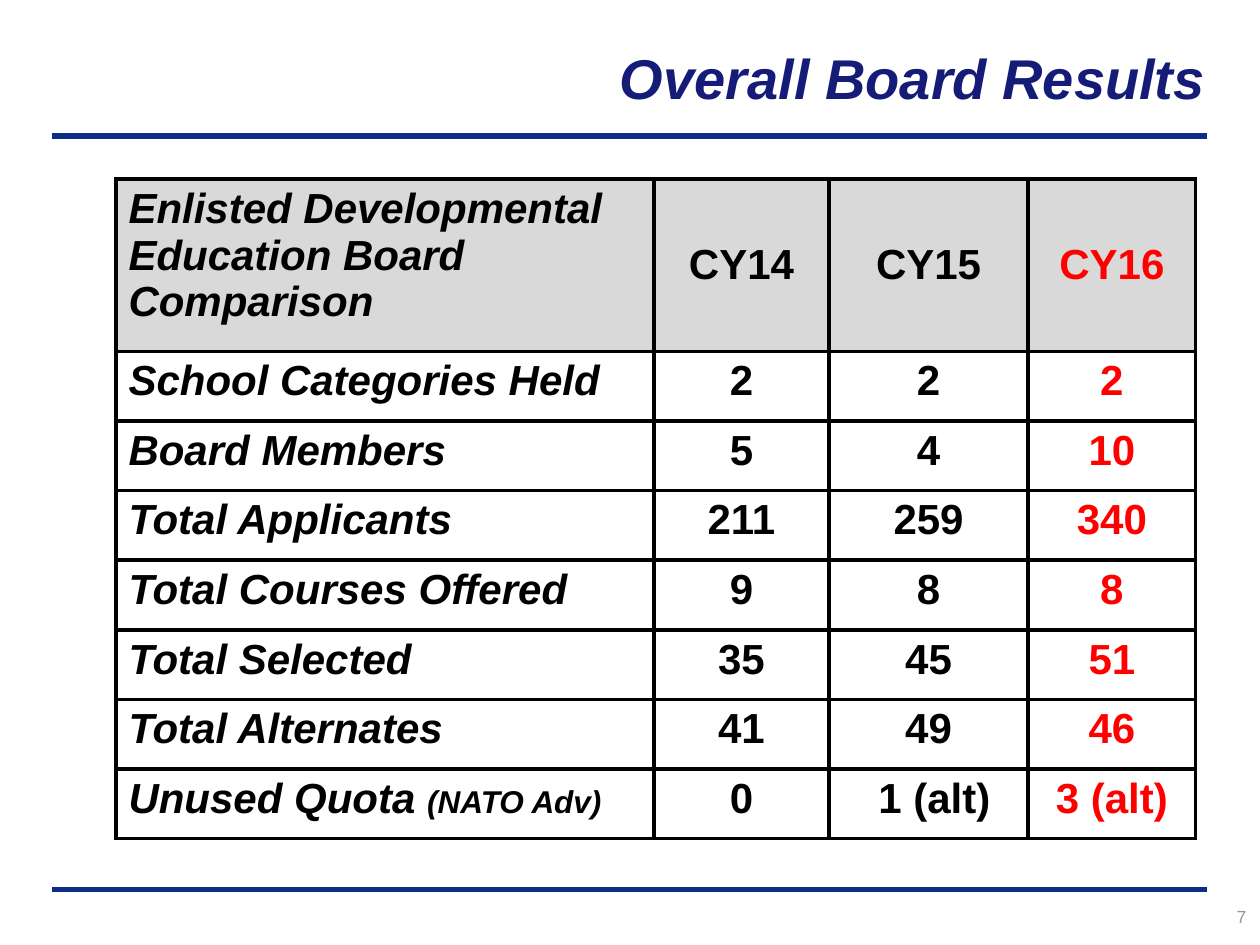
from lxml import etree
from pptx import Presentation
from pptx import util as u
from pptx.dml import color as c
from pptx.enum import shapes, text
from pptx.oxml import ns

COLORS = {"rule": "0C2D83", "title": "151C77", "number": "969696",
          "text": "000000", "current": "FF0000", "header": "D9D9D9"}
BASE = {"name": "Arial", "size": u.Pt(24), "bold": True, "italic": False}
LABEL = {**BASE, "italic": True}
NOTE = {**LABEL, "size": u.Pt(18)}
TITLE = {**LABEL, "size": u.Pt(32)}
NUMBER = {**BASE, "size": u.Pt(10), "bold": False}
COLUMNS = [307.44, 100.08, 113.76, 95.76]
HEADER_HEIGHT, ROW_HEIGHT = 98.5, 39.8
ROWS = [
    ("Enlisted Developmental Education Board Comparison", "CY14", "CY15", "CY16"),
    ("School Categories Held", "2", "2", "2"),
    ("Board Members", "5", "4", "10"),
    ("Total Applicants", "211", "259", "340"),
    ("Total Courses Offered", "9", "8", "8"),
    ("Total Selected", "35", "45", "51"),
    ("Total Alternates", "41", "49", "46"),
    ("Unused Quota ", "0", " 1 (alt)", "3 (alt)"),
]


def rgb(name):
    return c.RGBColor.from_string(COLORS[name])


def assign(target, values):
    for name, value in values.items():
        setattr(target, name, value)


def add_span(para, words, values, color):
    span = para.add_run()
    span.text = words
    assign(span.font, values)
    span.font.color.rgb = rgb(color)


def place(shape, left, top, width, height):
    assign(shape, {"left": u.Pt(left), "top": u.Pt(top),
                   "width": u.Pt(width), "height": u.Pt(height)})


def add_rule(page, height):
    rule = page.shapes.add_connector(shapes.MSO_CONNECTOR.STRAIGHT,
                                     u.Pt(30), u.Pt(height), u.Pt(690), u.Pt(height))
    rule.line.width = u.Pt(3)
    rule.line.color.rgb = rgb("rule")
    etree.SubElement(rule._element.spPr, ns.qn("a:effectLst"))


def add_title(page, words):
    title = page.shapes.title
    place(title, 102.24, 18, 594, 41.76)
    assign(title.text_frame, {"auto_size": text.MSO_AUTO_SIZE.NONE,
                              "vertical_anchor": text.MSO_ANCHOR.TOP,
                              "margin_top": u.Pt(6.9), "margin_bottom": 0})
    para = title.text_frame.paragraphs[0]
    para.alignment = text.PP_ALIGN.RIGHT
    add_span(para, words, TITLE, "title")


def add_number(page, words):
    box = page.shapes.add_textbox(u.Pt(629.28), u.Pt(514.08), u.Pt(90), u.Pt(23.76))
    box.text_frame.word_wrap = True
    para = box.text_frame.paragraphs[0]
    para.alignment = text.PP_ALIGN.RIGHT
    add_span(para, words, NUMBER, "number")


def add_borders(cell):
    properties = cell._tc.get_or_add_tcPr()
    for side in ("lnL", "lnR", "lnT", "lnB"):
        border = etree.SubElement(properties, ns.qn(f"a:{side}"), w=str(u.Pt(2.25)))
        fill = etree.SubElement(border, ns.qn("a:solidFill"))
        etree.SubElement(fill, ns.qn("a:srgbClr"), val=COLORS["text"])


def format_cell(cell, words, is_header, column):
    add_borders(cell)
    if is_header:
        cell.fill.solid()
        cell.fill.fore_color.rgb = rgb("header")
    else:
        cell.fill.background()
    para = cell.text_frame.paragraphs[0]
    if column == 0:
        add_span(para, words, LABEL, "text")
        return
    if is_header:
        cell.vertical_anchor = text.MSO_ANCHOR.MIDDLE
    para.alignment = text.PP_ALIGN.CENTER
    add_span(para, words, BASE, "current" if column == len(COLUMNS) - 1 else "text")


def add_results(page):
    heights = [HEADER_HEIGHT] + [ROW_HEIGHT] * (len(ROWS) - 1)
    table = page.shapes.add_table(len(ROWS), len(COLUMNS), u.Pt(66.24), u.Pt(102.24),
                                  u.Pt(sum(COLUMNS)), u.Pt(sum(heights))).table
    assign(table, {"first_row": False, "horz_banding": False})
    for column, width in zip(table.columns, COLUMNS):
        column.width = u.Pt(width)
    for row, height in zip(table.rows, heights):
        row.height = u.Pt(height)
    for row, values in enumerate(ROWS):
        for column, words in enumerate(values):
            format_cell(table.cell(row, column), words, row == 0, column)
    quota = table.cell(len(ROWS) - 1, 0).text_frame.paragraphs[0]
    add_span(quota, "(NATO Adv)", NOTE, "text")


def main():
    deck = Presentation()
    assign(deck, {"slide_width": u.Pt(720), "slide_height": u.Pt(540)})
    page = deck.slides.add_slide(deck.slide_layouts[5])
    for height in (508.32, 77.76):
        add_rule(page, height)
    add_number(page, "7")
    add_results(page)
    add_title(page, "Overall Board Results")
    deck.save("out.pptx")


if __name__ == "__main__":
    main()
